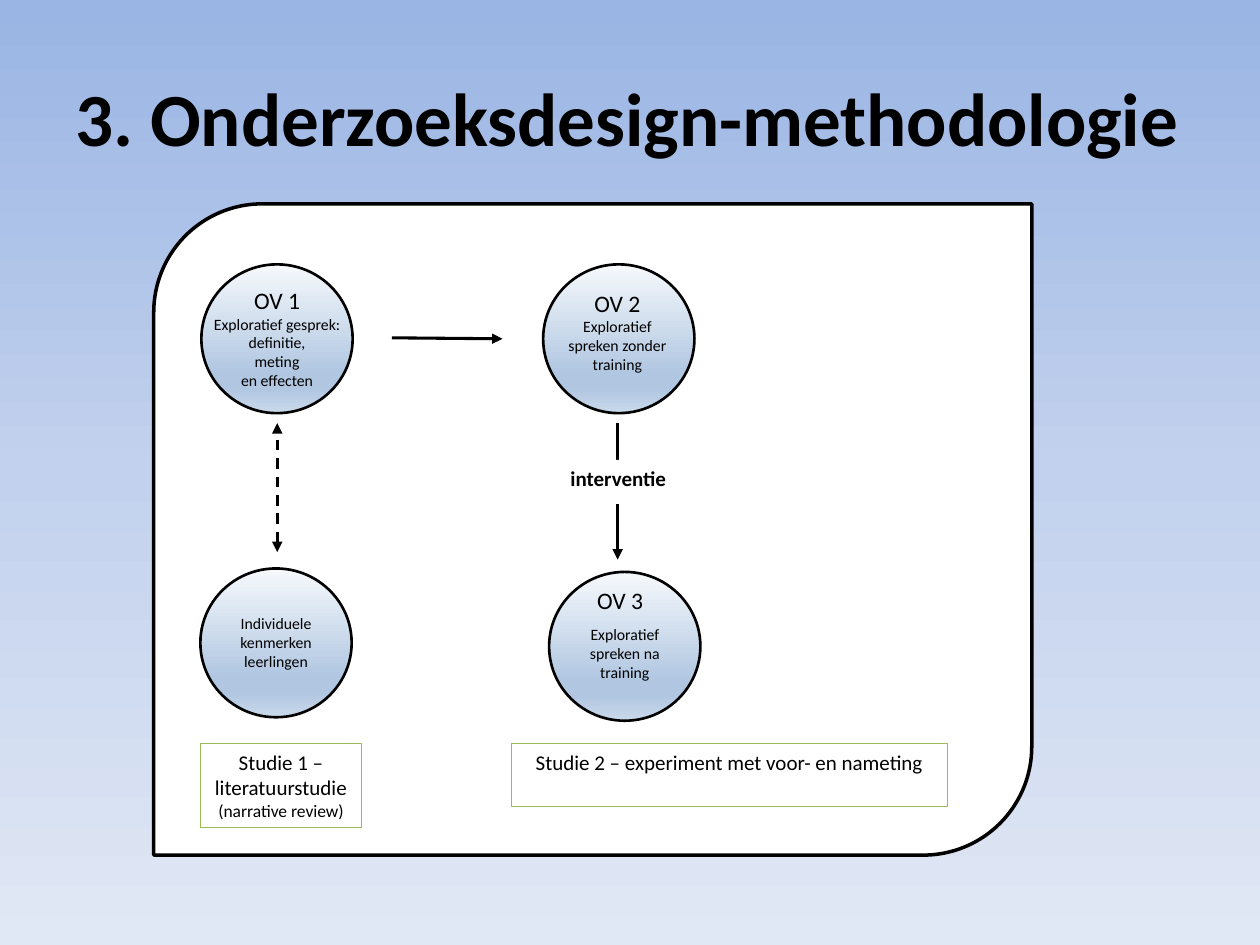
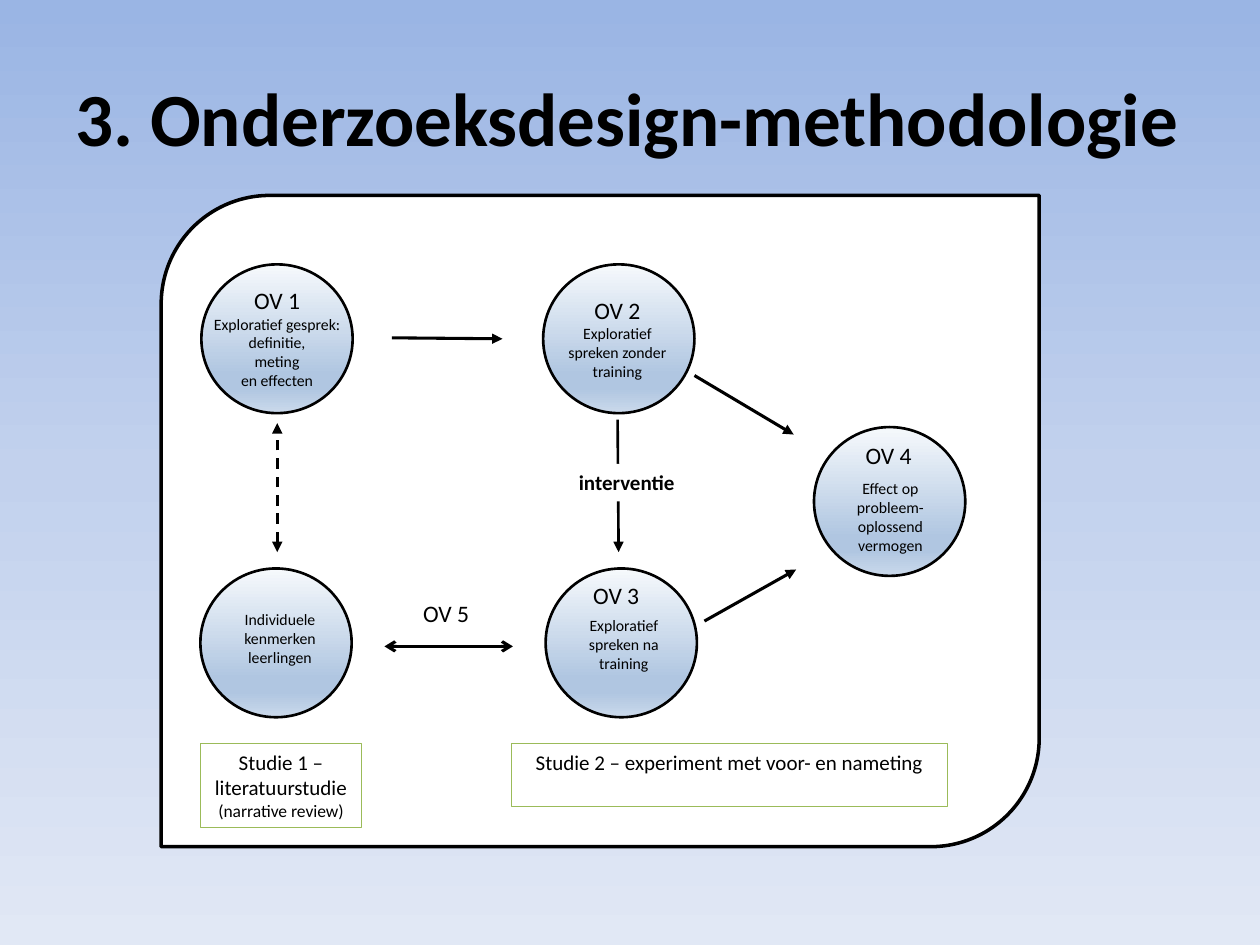
import pptx
import pptx.util
import pptx.dml.color
import pptx.enum.dml
import pptx.enum.shapes
import pptx.enum.text
import pptx.oxml.ns
from lxml import etree

Cm, Pt = pptx.util.Cm, pptx.util.Pt
RGB = pptx.dml.color.RGBColor.from_string
SHAPE = pptx.enum.shapes.MSO_SHAPE
ALIGN = pptx.enum.text.PP_ALIGN
ANCHOR = pptx.enum.text.MSO_ANCHOR
qn = pptx.oxml.ns.qn

COLORS = {"ink": "000000", "panel": "FFFFFF", "study": "9BBB59"}
SKY = [(0, "9AB5E4"), (50, "C2D1ED"), (100, "E1E8F5")]
BUBBLE = [(0, "F6F9FC"), (74, "B0C6E1"), (83, "B0C6E1"), (100, "CAD9EB")]
FONTS = {
    "title": {"size": Pt(42.9), "bold": True},
    "code": {"size": Pt(13.5)},
    "detail": {"size": Pt(9)},
    "study": {"size": Pt(12)},
    "review": {"size": Pt(10)},
    "step": {"size": Pt(12), "bold": True},
}


def set_gradient(fill, element, stops):
    """Fill from top to bottom; stops are (percent, colour) pairs."""
    fill.gradient()
    fill.gradient_angle = 270
    gs_list = element.xpath(".//a:gsLst")[0]
    for gs in list(gs_list):
        gs_list.remove(gs)
    for percent, color in stops:
        gs = etree.SubElement(gs_list, qn("a:gs"), pos=str(percent * 1000))
        etree.SubElement(gs, qn("a:srgbClr"), val=color)


def write_lines(sp, lines, align=ALIGN.CENTER, anchor=ANCHOR.TOP):
    """Write one paragraph per (text, font key) pair."""
    tf = sp.text_frame
    tf.word_wrap = True
    tf.vertical_anchor = anchor
    for i, (text, font) in enumerate(lines):
        p = tf.add_paragraph() if i else tf.paragraphs[0]
        p.alignment = align
        r = p.add_run()
        r.text = text
        r.font.name = "Calibri"
        r.font.color.rgb = RGB(COLORS["ink"])
        for name, value in FONTS[font].items():
            setattr(r.font, name, value)


# Wording
OV1 = [("OV 1", "code"), ("Exploratief gesprek:", "detail"), ("definitie,", "detail"),
       ("meting", "detail"), ("en effecten", "detail")]
OV2 = [("OV 2", "code"), ("Exploratief spreken zonder training", "detail")]
OV3 = [("Exploratief spreken na training", "detail")]
OV4 = [("Effect op probleem-oplossend vermogen", "detail")]
PUPILS = [("Individuele kenmerken leerlingen", "detail")]
STUDIES = [
    ((4.04, 14.99, 3.25, 1.7), [("Studie 1 –", "study"), ("literatuurstudie", "study"),
                                ("(narrative review)", "review")]),
    ((10.31, 14.99, 8.79, 1.27), [("Studie 2 – experiment met voor- en nameting", "study")]),
]

# Parts at the same place on both slides; lines: start, end, width, head, tail, dashed
shared_bubbles = [(4.06, 5.33), (10.95, 5.33), (4.04, 11.46)]
shared_lines = [
    ((7.9, 6.81), (10.13, 6.83), 1.75, None, "triangle", False),
    ((5.59, 11.13), (5.59, 8.53), 1.5, "triangle", "triangle", True),
]
shared_texts = [((3.86, 5.64, 3.45, 2.36), OV1)]

slides = [
    {
        "panel": (3.1, 4.11),
        "bubbles": [(11.07, 11.53)],
        "lines": [((12.45, 8.53), (12.45, 11.28), 1.5, None, "triangle", False)],
        "step": (10.8, 9.27, 3.33, 0.89),
        "texts": [
            ((11.1, 5.69, 2.69, 1.98), OV2),
            ((11.3, 12.47, 2.59, 1.42), OV3),
            ((4.37, 12.24, 2.39, 1.42), PUPILS),
        ],
        "codes": [((11.79, 11.68, 1.65, 0.84), "OV 3")],
    },
    {
        "panel": (3.25, 3.94),
        "bubbles": [(11.0, 11.46), (16.41, 8.61)],
        "lines": [
            ((12.45, 8.46), (12.47, 11.13), 1.5, None, "triangle", False),
            ((14.0, 7.57), (16.0, 8.76), 1.75, None, "triangle", False),
            ((7.75, 13.03), (10.34, 13.03), 1.75, "arrow", "arrow", False),
            ((14.2, 12.52), (16.05, 11.48), 1.75, None, "triangle", False),
        ],
        "step": (10.97, 9.35, 3.33, 0.76),
        "texts": [
            ((11.1, 5.84, 2.69, 1.98), OV2),
            ((11.28, 12.29, 2.59, 1.42), OV3),
            ((4.45, 12.17, 2.39, 1.42), PUPILS),
            ((16.59, 9.52, 2.72, 1.8), OV4),
        ],
        "codes": [
            ((11.71, 11.58, 1.65, 0.84), "OV 3"),
            ((17.2, 8.76, 1.8, 0.84), "OV 4"),
            ((8.28, 11.94, 2.29, 0.84), "OV 5"),
        ],
    },
]

prs = pptx.Presentation()
prs.slide_width, prs.slide_height = Cm(25.4), Cm(19.05)

for content in slides:
    s = prs.slides.add_slide(prs.slide_layouts[6])
    set_gradient(s.background.fill, s.element, SKY)

    sp = s.shapes.add_textbox(Cm(1.27), Cm(0.76), Cm(22.86), Cm(3.18))
    write_lines(sp, [("3. Onderzoeksdesign-methodologie", "title")], ALIGN.LEFT, ANCHOR.MIDDLE)

    sp = s.shapes.add_shape(SHAPE.ROUND_2_DIAG_RECTANGLE, *map(Cm, content["panel"]),
                            Cm(17.7), Cm(13.13))
    sp.shadow.inherit = False
    sp.fill.solid()
    sp.fill.fore_color.rgb = RGB(COLORS["panel"])
    sp.line.color.rgb = RGB(COLORS["ink"])
    sp.line.width = Pt(2)

    for left, top in shared_bubbles + content["bubbles"]:
        sp = s.shapes.add_shape(SHAPE.OVAL, Cm(left), Cm(top), Cm(3.05), Cm(3))
        sp.shadow.inherit = False
        set_gradient(sp.fill, sp.element, BUBBLE)
        sp.line.color.rgb = RGB(COLORS["ink"])
        sp.line.width = Pt(1.5)

    for start, end, width, head, tail, dashed in shared_lines + content["lines"]:
        c = s.shapes.add_connector(pptx.enum.shapes.MSO_CONNECTOR.STRAIGHT,
                                   *map(Cm, start + end))
        c.line.color.rgb = RGB(COLORS["ink"])
        c.line.width = Pt(width)
        if dashed:
            c.line.dash_style = pptx.enum.dml.MSO_LINE.DASH
        ln = c.element.xpath(".//a:ln")[0]
        for tag, kind in (("a:headEnd", head), ("a:tailEnd", tail)):
            if kind:
                etree.SubElement(ln, qn(tag), type=kind)
        etree.SubElement(c.element.spPr, qn("a:effectLst"))

    sp = s.shapes.add_shape(SHAPE.RECTANGLE, *map(Cm, content["step"]))
    sp.shadow.inherit = False
    sp.fill.solid()
    sp.fill.fore_color.rgb = RGB(COLORS["panel"])
    sp.line.fill.background()
    write_lines(sp, [("interventie", "step")])

    for box, lines in shared_texts + content["texts"]:
        write_lines(s.shapes.add_textbox(*map(Cm, box)), lines)
    for box, code in content["codes"]:
        write_lines(s.shapes.add_textbox(*map(Cm, box)), [(code, "code")], ALIGN.LEFT)

    for box, lines in STUDIES:
        sp = s.shapes.add_shape(SHAPE.RECTANGLE, *map(Cm, box))
        sp.shadow.inherit = False
        sp.fill.background()
        sp.line.color.rgb = RGB(COLORS["study"])
        sp.line.width = Pt(0.75)
        write_lines(sp, lines)

prs.save("out.pptx")
